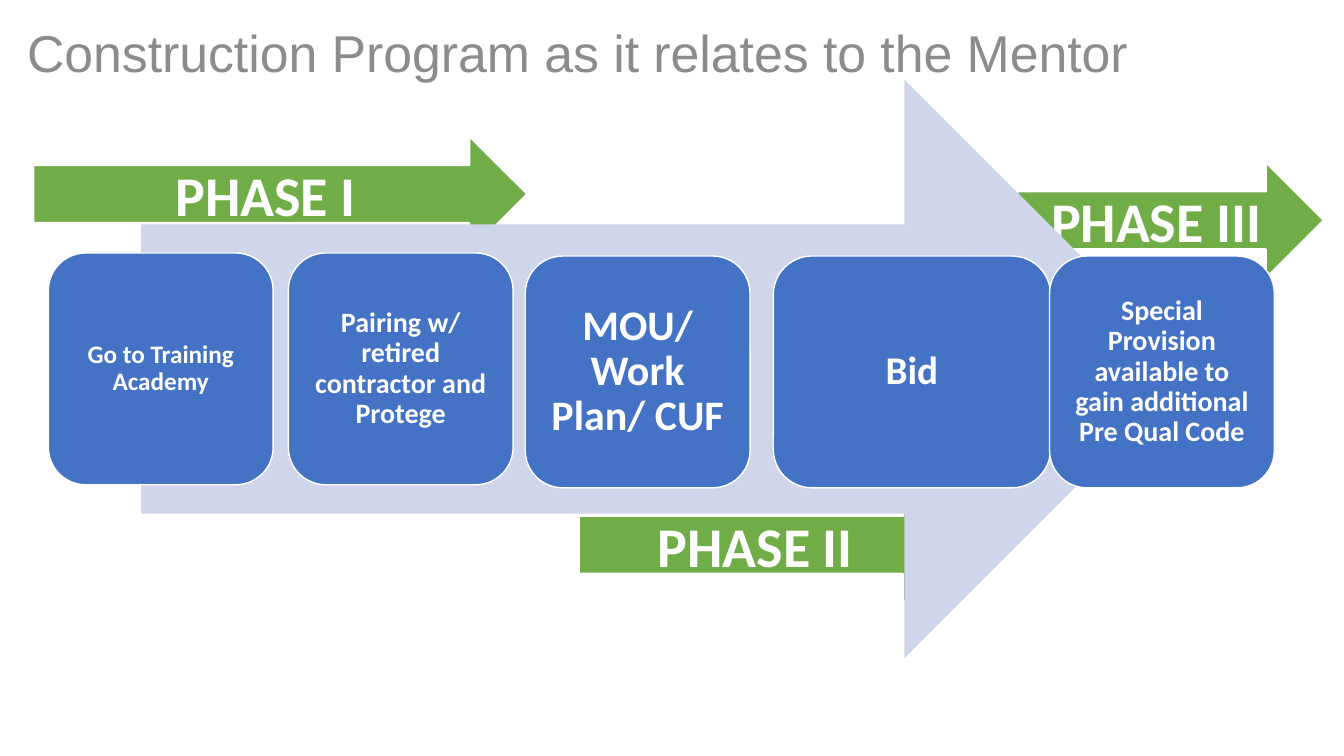
from pptx import Presentation
from pptx.dml.color import RGBColor
from pptx.enum.shapes import MSO_SHAPE
from pptx.enum.text import MSO_ANCHOR, PP_ALIGN
from pptx.util import Inches, Pt

ARROW = MSO_SHAPE.RIGHT_ARROW
ROUNDED = MSO_SHAPE.ROUNDED_RECTANGLE
MIDDLE = MSO_ANCHOR.MIDDLE
LEFT, CENTER = PP_ALIGN.LEFT, PP_ALIGN.CENTER

WHITE = RGBColor(0xFF, 0xFF, 0xFF)
GRAY = RGBColor(0x8C, 0x8C, 0x8C)
GREEN = RGBColor(0x70, 0xAD, 0x47)
BLUE = RGBColor(0x44, 0x72, 0xC4)
PALE_BLUE = RGBColor(0xCF, 0xD5, 0xEA)

PHASE_HEIGHT = 1.15
STEP_HEIGHT = 2.3
PHASES = [
    ("PHASE I", 0, 0.56, 4.9),
    ("PHASE II", 5.41, 4.04, 3.79),
    ("PHASE III", 9.76, 0.82, 3.04),
]
STEPS = [
    ("Go to Training Academy", 0.15, 1.72, 2.23, 18, 0.07),
    ("Pairing w/ retired contractor and Protege", 2.53, 1.72, 2.23, 20, 0.08),
    ("Bid", 7.34, 1.75, 2.75, 28, 0.12),
    ("Special Provision available to gain additional Pre Qual Code",
     10.08, 1.75, 2.23, 20, 0.08),
    ("MOU/ Work Plan/ CUF", 4.88, 1.75, 2.23, 30, 0.12),
]


def set_text(s, text, size, color, font="Calibri", bold=True, align=CENTER):
    tf = s.text_frame
    tf.word_wrap = True
    tf.vertical_anchor = MIDDLE
    tf.text = text
    p = tf.paragraphs[0]
    p.alignment = align
    r = p.runs[0]
    r.font.name = font
    r.font.size = Pt(size)
    r.font.bold = bold
    r.font.color.rgb = color
    return tf


def add_block(slide, kind, left, top, width, height, fill, line_width=None):
    s = slide.shapes.add_shape(kind, Inches(left), Inches(top),
                               Inches(width), Inches(height))
    s.shadow.inherit = False
    s.fill.solid()
    s.fill.fore_color.rgb = fill
    if line_width is None:
        s.line.fill.background()
    else:
        s.line.color.rgb = WHITE
        s.line.width = Pt(line_width)
    return s


def add_title(slide, left, top, width, height):
    s = slide.shapes.add_textbox(Inches(left), Inches(top),
                                 Inches(width), Inches(height))
    set_text(s, "Construction Program as it relates to the Mentor",
             37, GRAY, "Arial", False, LEFT)


def add_phases(slide, left, top):
    for text, dx, dy, width in PHASES:
        s = add_block(slide, ARROW, left + dx, top + dy, width, PHASE_HEIGHT,
                      GREEN, 1.5)
        set_text(s, text, 40, WHITE)


def add_process(slide, left, top):
    add_block(slide, ARROW, left + 1.07, top, 10.44, 5.74, PALE_BLUE)
    for text, dx, dy, width, size, inset in STEPS:
        s = add_block(slide, ROUNDED, left + dx, top + dy, width, STEP_HEIGHT,
                      BLUE, 1)
        tf = set_text(s, text, size, WHITE)
        tf.margin_left = tf.margin_right = Inches(inset)
        tf.margin_top = tf.margin_bottom = Inches(inset)
        tf.paragraphs[0].line_spacing = 0.9


def main():
    prs = Presentation()
    prs.slide_width = Inches(13.33)
    prs.slide_height = Inches(7.5)
    slide = prs.slides.add_slide(prs.slide_layouts[6])
    add_title(slide, 0.17, 0.11, 12.96, 0.8)
    add_phases(slide, 0.33, 0.79)
    add_process(slide, 0.33, 0.79)
    prs.save("out.pptx")


if __name__ == "__main__":
    main()
